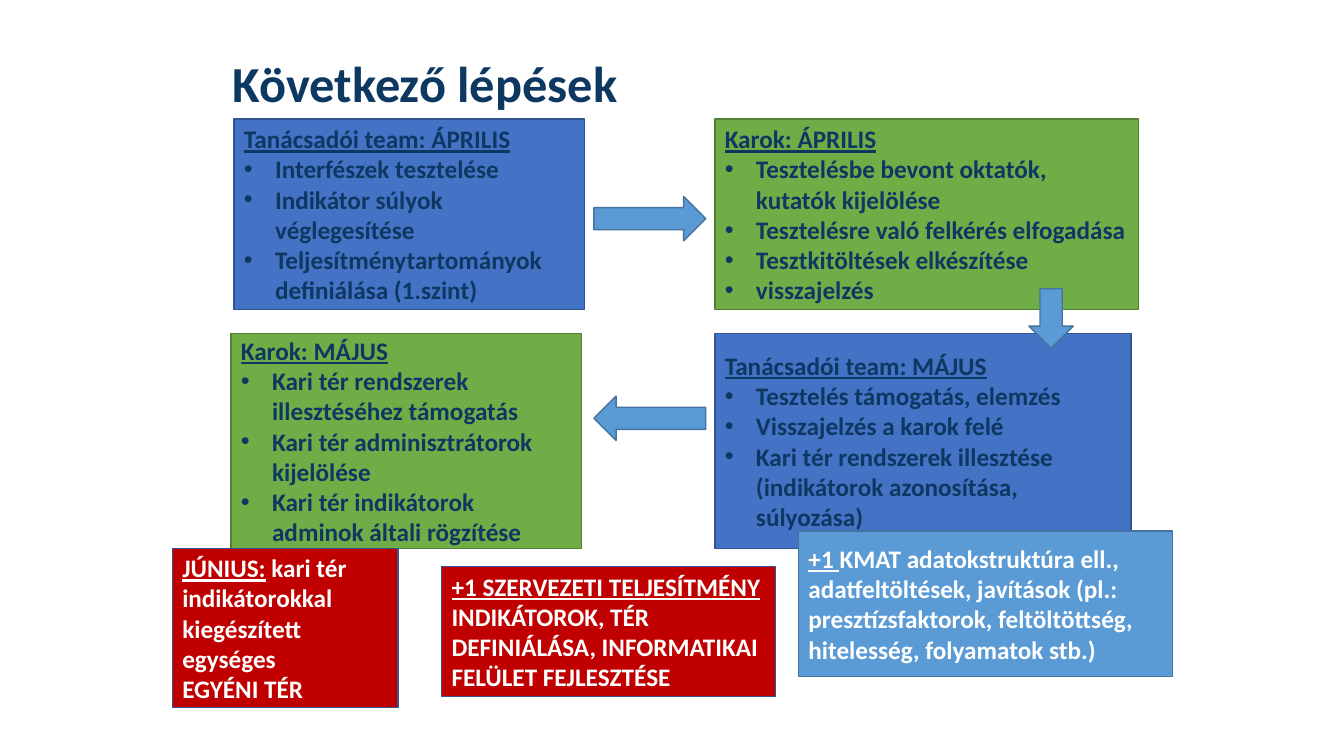
from lxml import etree
from pptx import Presentation
from pptx.dml.color import RGBColor
from pptx.enum.shapes import MSO_SHAPE
from pptx.enum.text import MSO_ANCHOR, PP_ALIGN
from pptx.oxml.ns import qn
from pptx.util import Pt

RECT = MSO_SHAPE.RECTANGLE
ARROW = MSO_SHAPE.RIGHT_ARROW
MIDDLE = MSO_ANCHOR.MIDDLE
LEFT = PP_ALIGN.LEFT

SCALE = 9144  # EMU per px, 100 px to the inch
INDENT = 31
NAVY, WHITE = "0D3862", "FFFFFF"
# Fill and outline pairs
BLUE = ("4472C4", "325491")
GREEN = ("70AD47", "538035")
SKY = ("5B9BD5", "43739E")
RED = ("C00000", "325491")


def px(n):
    return n * SCALE


def rgb(code):
    return RGBColor.from_string(code)


class Board:
    """Holds the text style and the current slide."""

    def __init__(self, slide, font="Calibri", size=18):
        self.slide, self.font, self.size = slide, font, size

    def style(self, run, color, size=None, under=False):
        font = run.font
        font.name, font.size, font.bold = self.font, Pt(size or self.size), True
        font.underline = under
        font.color.rgb = rgb(color)

    def title(self, area, text):
        frame = self.slide.shapes.add_textbox(*map(px, area)).text_frame
        frame.word_wrap = True
        frame.text = text
        self.style(frame.paragraphs[0].runs[0], NAVY, 36)

    def shape(self, kind, area, paint, turn=0):
        item = self.slide.shapes.add_shape(kind, *map(px, area))
        item.shadow.inherit = False
        item.rotation = turn
        item.fill.solid()
        item.fill.fore_color.rgb = rgb(paint[0])
        item.line.color.rgb = rgb(paint[1])
        item.line.width = Pt(1)
        return item

    def frame(self, area, paint, lines):
        frame = self.shape(RECT, area, paint).text_frame
        frame.word_wrap = True
        frame.vertical_anchor = MIDDLE
        frame.text = "\n".join(lines)
        for par in frame.paragraphs:
            par.alignment = LEFT
        return frame

    def card(self, area, paint, head, items):
        """Underlined heading above a bullet list."""
        pars = self.frame(area, paint, [head, *items]).paragraphs
        self.style(pars[0].runs[0], NAVY, under=True)
        for par in pars[1:]:
            self.style(par.runs[0], NAVY)
            self.bullet(par)

    def bullet(self, par):
        props = par._p.get_or_add_pPr()
        props.set("marL", str(px(INDENT)))
        props.set("indent", str(-px(INDENT)))
        etree.SubElement(props, qn("a:buFont")).set("typeface", "Arial")
        etree.SubElement(props, qn("a:buChar")).set("char", "•")

    def note(self, area, paint, lead, *lines):
        """Underlined lead-in followed by plain text."""
        pars = self.frame(area, paint, [lead, *lines[1:]]).paragraphs
        pars[0].add_run().text = lines[0]
        for par in pars:
            for run in par.runs:
                self.style(run, WHITE)
        pars[0].runs[0].font.underline = True

    def arrow(self, area, turn=0):
        self.shape(ARROW, area, SKY, turn)


def main():
    deck = Presentation()
    deck.slide_width, deck.slide_height = px(1333), px(750)
    board = Board(deck.slides.add_slide(deck.slide_layouts[6]))

    board.title((221, 47, 946, 71), "Következő lépések")

    # April and May tasks
    board.card((232, 118, 348, 189), BLUE, "Tanácsadói team: ÁPRILIS", [
        "Interfészek tesztelése",
        "Indikátor súlyok véglegesítése",
        "Teljesítménytartományok definiálása (1.szint)"])
    board.card((709, 118, 420, 189), GREEN, "Karok: ÁPRILIS", [
        "Tesztelésbe bevont oktatók, kutatók kijelölése",
        "Tesztelésre való felkérés elfogadása",
        "Tesztkitöltések elkészítése",
        "visszajelzés"])
    board.card((229, 331, 348, 213), GREEN, "Karok: MÁJUS", [
        "Kari tér rendszerek illesztéséhez támogatás",
        "Kari tér adminisztrátorok kijelölése",
        "Kari tér indikátorok adminok általi rögzítése"])
    board.card((709, 331, 413, 213), BLUE, "Tanácsadói team: MÁJUS", [
        "Tesztelés támogatás, elemzés",
        "Visszajelzés a karok felé",
        "Kari tér rendszerek illesztése (indikátorok azonosítása, súlyozása)"])

    # Arrows around the cycle
    board.arrow((589, 195, 111, 44))
    board.arrow((1013, 294, 59, 44), 90)
    board.arrow((589, 393, 111, 44), 180)

    # June result and extra tasks
    board.note((171, 544, 224, 158), RED, "JÚNIUS:",
               " kari tér indikátorokkal kiegészített egységes", "EGYÉNI TÉR")
    board.note((792, 527, 371, 144), SKY, "+1 ",
               "KMAT adatokstruktúra ell., adatfeltöltések, javítások (pl.: "
               "presztízsfaktorok, feltöltöttség, hitelesség, folyamatok stb.)")
    board.note((438, 562, 331, 129), RED, "+1 SZERVEZETI TELJESÍTMÉNY ",
               "INDIKÁTOROK, TÉR DEFINIÁLÁSA, INFORMATIKAI FELÜLET FEJLESZTÉSE")

    deck.save("out.pptx")


if __name__ == "__main__":
    main()
